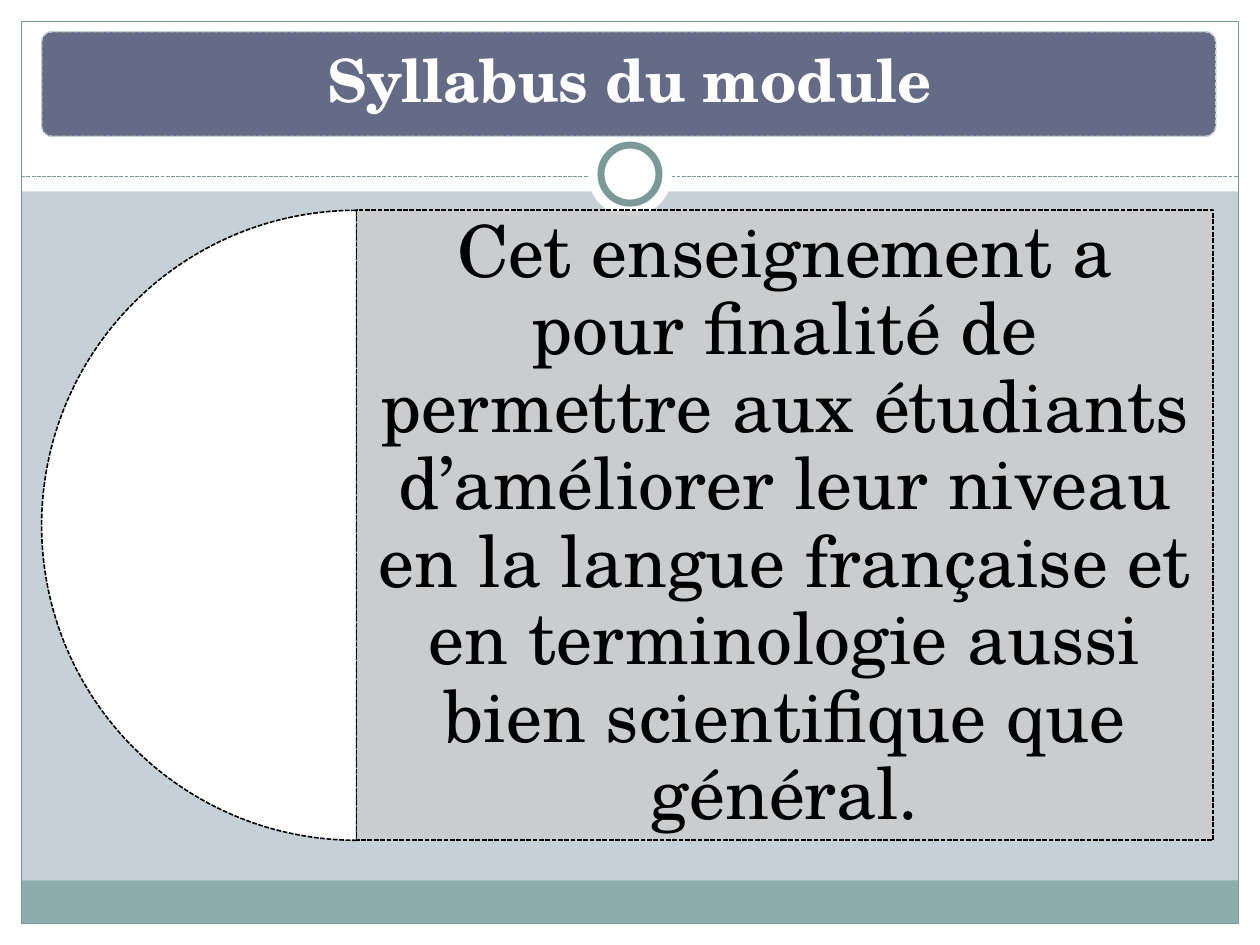
"""Build the module syllabus slide with its banner and half-disc panel."""
import dataclasses
import typing

import lxml.etree
import pptx
import pptx.dml.color
import pptx.enum.dml
import pptx.enum.shapes
import pptx.enum.text
import pptx.oxml.ns
import pptx.util

Cm = pptx.util.Cm
Pt = pptx.util.Pt
RGBColor = pptx.dml.color.RGBColor
Kind = pptx.enum.shapes.MSO_SHAPE

WHITE = RGBColor(0xFF, 0xFF, 0xFF)
BLACK = RGBColor(0x00, 0x00, 0x00)
MIST = RGBColor(0xC5, 0xD1, 0xD7)
TEAL = RGBColor(0x8C, 0xAD, 0xAE)
DARK_TEAL = RGBColor(0x7C, 0x99, 0x9A)
SLATE = RGBColor(0x64, 0x6B, 0x86)
GREY = RGBColor(0xCC, 0xCC, 0xCC)

FONT = "TeX Gyre Schola"
WIDTH, HEIGHT, MARGIN = 25.4, 19.05, 0.43
INNER_WIDTH = WIDTH - 2 * MARGIN
CENTRE, RING_Y = WIDTH / 2, 3.51
DISC_LEFT, PANEL_TOP, DISC_SIZE = 0.84, 4.24, 12.7


@dataclasses.dataclass(frozen=True)
class Outline:
    color: RGBColor
    width: float
    dashed: bool = False


@dataclasses.dataclass(frozen=True)
class Block:
    left: float
    top: float
    width: float
    height: float
    fill: typing.Optional[RGBColor] = None
    outline: typing.Optional[Outline] = None
    kind: Kind = Kind.RECTANGLE
    adjustments: tuple[float, ...] = ()


@dataclasses.dataclass(frozen=True)
class TextStyle:
    size: float
    color: RGBColor
    bold: bool
    inset: float


def circle(diameter: float, outline: typing.Optional[Outline] = None) -> Block:
    """Return a white circle centred on the ring position."""
    radius = diameter / 2
    return Block(CENTRE - radius, RING_Y - radius, diameter, diameter,
                 WHITE, outline, Kind.OVAL)


THIN = Outline(DARK_TEAL, 0.75)
DIVIDER = Outline(DARK_TEAL, 0.75, True)
BLACK_DASH = Outline(BLACK, 0.9, True)

FRAME_BLOCKS = (
    Block(0, HEIGHT - MARGIN, WIDTH, MARGIN, WHITE),
    Block(0, 0, WIDTH, 3.86, WHITE),
    Block(0, 0, MARGIN, HEIGHT, WHITE),
    Block(WIDTH - MARGIN, 0, MARGIN, HEIGHT, WHITE),
    Block(MARGIN, 17.75, INNER_WIDTH, 0.87, TEAL),
    Block(MARGIN, MARGIN, INNER_WIDTH, HEIGHT - 2 * MARGIN, None, THIN),
)
RING_BLOCKS = (circle(1.7), circle(1.17, Outline(DARK_TEAL, 4)))
BANNER = Block(0.84, 0.64, 23.67, 2.11, SLATE, Outline(MIST, 0.9, True),
               Kind.ROUNDED_RECTANGLE, (0.1,))
HALF_DISC = Block(DISC_LEFT, PANEL_TOP, DISC_SIZE, DISC_SIZE, WHITE,
                  BLACK_DASH, Kind.PIE, (54, 162))
PANEL = Block(DISC_LEFT + DISC_SIZE / 2, PANEL_TOP, 17.27, DISC_SIZE,
              GREY, BLACK_DASH)

TITLE = "Syllabus du module"
TITLE_STYLE = TextStyle(34, WHITE, True, 0.36)
BODY = ("Cet enseignement a pour finalité de permettre aux étudiants "
        "d’améliorer leur niveau en la langue française et en terminologie "
        "aussi bien scientifique que général.")
BODY_STYLE = TextStyle(41, BLACK, False, 0.43)


def apply_format(target: typing.Any, values: dict[str, typing.Any]) -> None:
    """Set each named attribute on the target."""
    for name, value in values.items():
        setattr(target, name, value)


def style_line(line: typing.Any, outline: Outline) -> None:
    """Apply an outline to a line format."""
    line.color.rgb = outline.color
    line.width = Pt(outline.width)
    if outline.dashed:
        line.dash_style = pptx.enum.dml.MSO_LINE.SQUARE_DOT


def draw_block(slide: typing.Any, block: Block) -> typing.Any:
    """Draw one filled or outlined block."""
    shape = slide.shapes.add_shape(
        block.kind, Cm(block.left), Cm(block.top),
        Cm(block.width), Cm(block.height))
    shape.shadow.inherit = False
    for index, value in enumerate(block.adjustments):
        shape.adjustments[index] = value
    if block.fill is None:
        shape.fill.background()
    else:
        shape.fill.solid()
        shape.fill.fore_color.rgb = block.fill
    if block.outline is None:
        shape.line.fill.background()
    else:
        style_line(shape.line, block.outline)
    return shape


def draw_divider(slide: typing.Any, level: float) -> None:
    """Draw the dashed line across the frame."""
    divider = slide.shapes.add_connector(
        pptx.enum.shapes.MSO_CONNECTOR.STRAIGHT,
        Cm(MARGIN), Cm(level), Cm(WIDTH - MARGIN), Cm(level))
    style_line(divider.line, DIVIDER)
    lxml.etree.SubElement(divider.element.spPr, pptx.oxml.ns.qn("a:effectLst"))


def set_opacity(shape: typing.Any, percent: int) -> None:
    """Make a solid fill partly transparent."""
    color = shape.element.spPr.find(
        "/".join(map(pptx.oxml.ns.qn, ("a:solidFill", "a:srgbClr"))))
    alpha = lxml.etree.SubElement(color, pptx.oxml.ns.qn("a:alpha"))
    alpha.set("val", str(percent * 1000))


def write_text(shape: typing.Any, text: str, style: TextStyle) -> None:
    """Write one centred paragraph in the shape."""
    inset = Cm(style.inset)
    frame = shape.text_frame
    apply_format(frame, {
        "word_wrap": True,
        "auto_size": pptx.enum.text.MSO_AUTO_SIZE.NONE,
        "vertical_anchor": pptx.enum.text.MSO_ANCHOR.MIDDLE,
        "margin_left": inset, "margin_right": inset,
        "margin_top": inset, "margin_bottom": inset,
    })
    para = frame.paragraphs[0]
    apply_format(para, {"alignment": pptx.enum.text.PP_ALIGN.CENTER,
                        "line_spacing": 0.9})
    span = para.add_run()
    span.text = text
    apply_format(span.font, {"name": FONT, "size": Pt(style.size),
                             "bold": style.bold})
    span.font.color.rgb = style.color


def place_title(slide: typing.Any) -> None:
    """Set the title placeholder on top of the banner."""
    title = slide.shapes.title
    apply_format(title, {"left": Cm(0.91), "top": Cm(0.69),
                         "width": Cm(23.57), "height": Cm(1.98)})
    write_text(title, TITLE, TITLE_STYLE)
    title.element.getparent().append(title.element)


def main() -> None:
    """Build and save the deck."""
    deck = pptx.Presentation()
    apply_format(deck, {"slide_width": Cm(WIDTH), "slide_height": Cm(HEIGHT)})
    page = deck.slides.add_slide(deck.slide_layouts.get_by_name("Title Only"))
    page.background.fill.solid()
    page.background.fill.fore_color.rgb = MIST
    for block in FRAME_BLOCKS:
        draw_block(page, block)
    draw_divider(page, 3.56)
    for block in (*RING_BLOCKS, BANNER):
        draw_block(page, block)
    place_title(page)
    draw_block(page, HALF_DISC)
    panel = draw_block(page, PANEL)
    set_opacity(panel, 90)
    write_text(panel, BODY, BODY_STYLE)
    deck.save("out.pptx")


if __name__ == "__main__":
    main()
